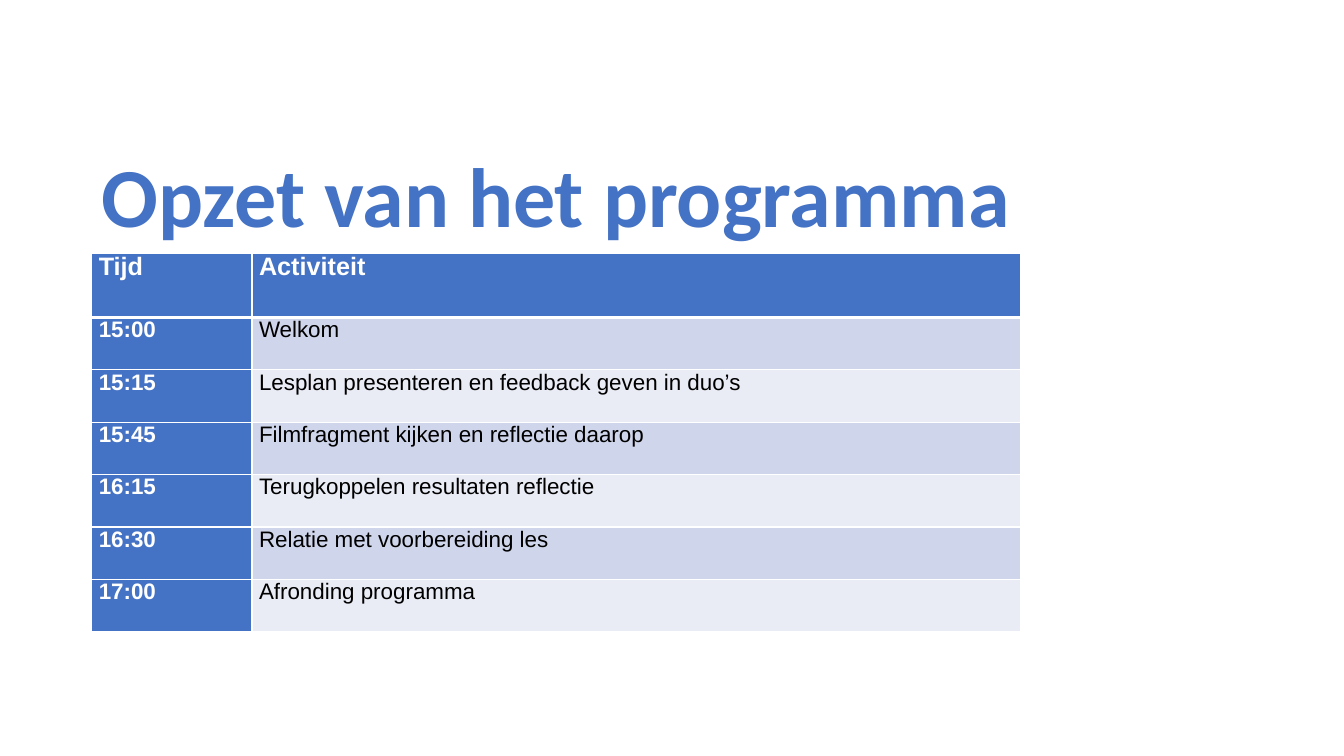
from lxml import etree
from pptx import Presentation
from pptx.dml.color import RGBColor
from pptx.enum.text import MSO_ANCHOR
from pptx.oxml.ns import qn
from pptx.util import Inches, Pt

BOTTOM, TOP = MSO_ANCHOR.BOTTOM, MSO_ANCHOR.TOP

# Content
TITLE = "Opzet van het programma"
HEADER = ("Tijd", "Activiteit")
PROGRAMME = [
    ("15:00", "Welkom"),
    ("15:15", "Lesplan presenteren en feedback geven in duo’s"),
    ("15:45", "Filmfragment kijken en reflectie daarop"),
    ("16:15", "Terugkoppelen resultaten reflectie"),
    ("16:30", "Relatie met voorbereiding les"),
    ("17:00", "Afronding programma"),
]

# Look
COLOURS = {"blue": "4472C4", "white": "FFFFFF", "black": "000000",
           "dark band": "CFD5EA", "light band": "E9EBF5"}
TITLE_FONT = {"name": "Calibri", "size": Pt(60), "bold": True}
HEADER_FONT = {"name": "Arial", "size": Pt(18), "bold": True}
TIME_FONT = {"name": "Arial", "size": Pt(16), "bold": True}
ACTIVITY_FONT = {"name": "Arial", "size": Pt(16), "bold": False}
CELL_FORMAT = {"margin_left": Inches(0.07), "margin_right": Inches(0.07),
               "margin_top": 0, "margin_bottom": 0, "vertical_anchor": TOP}
THIN, THICK = 1, 3

# Layout in inches
SLIDE_WIDTH, SLIDE_HEIGHT = 13.33, 7.5
LEFT = 0.91
TITLE_TOP, TITLE_WIDTH, TITLE_HEIGHT = 1.15, 11.5, 1.34
TABLE_TOP = 2.51
COLUMN_WIDTHS = (1.59, 7.62)
HEADER_HEIGHT, ROW_HEIGHT = 0.64, 0.52


def apply(target, values):
    for name, value in values.items():
        setattr(target, name, value)


def write(para, text, font, colour):
    span = para.add_run()
    span.text = text
    apply(span.font, font)
    span.font.color.rgb = RGBColor.from_string(COLOURS[colour])


def add_borders(cell, top, bottom):
    properties = cell._tc.get_or_add_tcPr()
    for side, points in (("L", THIN), ("R", THIN), ("T", top), ("B", bottom)):
        line = etree.SubElement(properties, qn(f"a:ln{side}"), w=str(Pt(points)))
        fill = etree.SubElement(line, qn("a:solidFill"))
        etree.SubElement(fill, qn("a:srgbClr"), val=COLOURS["white"])


def cell_style(row, column):
    """Return font, text colour and fill colour of a cell."""
    if row == 0:
        return HEADER_FONT, "white", "blue"
    if column == 0:
        return TIME_FONT, "white", "blue"
    return ACTIVITY_FONT, "black", "dark band" if row % 2 else "light band"


def add_title(page):
    box = page.shapes.add_textbox(Inches(LEFT), Inches(TITLE_TOP),
                                  Inches(TITLE_WIDTH), Inches(TITLE_HEIGHT))
    apply(box.text_frame, {"word_wrap": True, "vertical_anchor": BOTTOM})
    para = box.text_frame.paragraphs[0]
    para.line_spacing = 0.9
    write(para, TITLE, TITLE_FONT, "blue")


def add_programme(page):
    rows = [HEADER] + PROGRAMME
    heights = [HEADER_HEIGHT] + [ROW_HEIGHT] * len(PROGRAMME)
    table = page.shapes.add_table(
        len(rows), len(HEADER), Inches(LEFT), Inches(TABLE_TOP),
        Inches(sum(COLUMN_WIDTHS)), Inches(sum(heights))).table
    for column, width in zip(table.columns, COLUMN_WIDTHS):
        column.width = Inches(width)
    for table_row, height in zip(table.rows, heights):
        table_row.height = Inches(height)
    for row, texts in enumerate(rows):
        for column, text in enumerate(texts):
            cell = table.cell(row, column)
            font, colour, fill = cell_style(row, column)
            apply(cell, CELL_FORMAT)
            add_borders(cell, THICK if row == 1 else THIN,
                        THICK if row == 0 else THIN)
            cell.fill.solid()
            cell.fill.fore_color.rgb = RGBColor.from_string(COLOURS[fill])
            write(cell.text_frame.paragraphs[0], text, font, colour)


def main():
    deck = Presentation()
    deck.slide_width = Inches(SLIDE_WIDTH)
    deck.slide_height = Inches(SLIDE_HEIGHT)
    page = deck.slides.add_slide(deck.slide_layouts[6])
    add_title(page)
    add_programme(page)
    deck.save("out.pptx")


if __name__ == "__main__":
    main()
